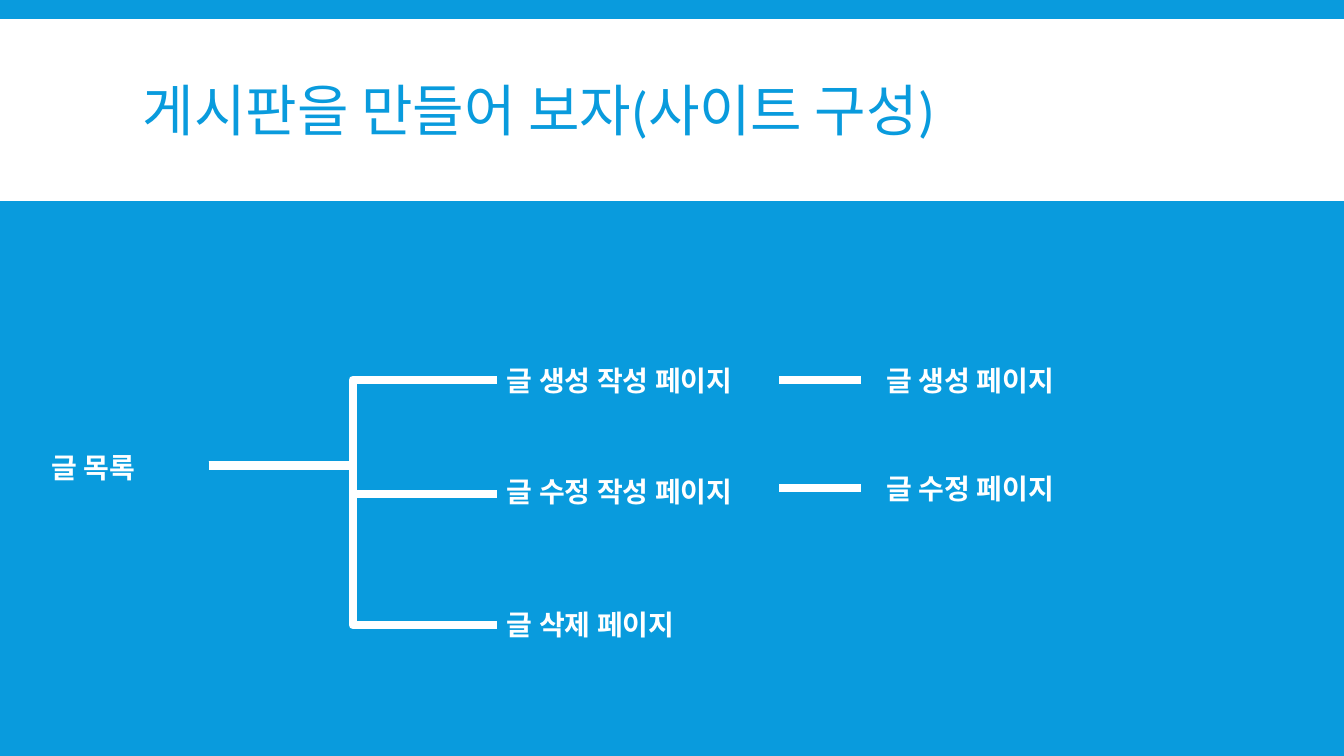
from dataclasses import dataclass

from lxml import etree
from pptx import Presentation
from pptx.dml.color import RGBColor
from pptx.enum.shapes import MSO_CONNECTOR, MSO_SHAPE
from pptx.enum.text import MSO_ANCHOR
from pptx.oxml.ns import qn
from pptx.util import Pt

RECT = MSO_SHAPE.RECTANGLE
ELBOW = MSO_CONNECTOR.ELBOW
LINE = MSO_CONNECTOR.STRAIGHT
TOP = MSO_ANCHOR.TOP
MIDDLE = MSO_ANCHOR.MIDDLE


@dataclass(frozen=True)
class Theme:
    blue: RGBColor = RGBColor(0x09, 0x9B, 0xDD)
    white: RGBColor = RGBColor(0xFF, 0xFF, 0xFF)
    font: str = "Calibri"
    title: int = 40
    label: int = 20
    stroke: int = 6


THEME = Theme()
WIDE, HIGH = 960, 540

# Tree layout: column edges, label height, link height
ROOT_X, PAGE_X, NEXT_X = 29.5, 355, 626.4
LABEL_H = 31.7
ROOT_Y = 332.6
FORK_X = 149
LINK_X = (556.6, 614.9)
LINK_DROP = 15.1  # from the top of a label to its link

# Page label, its top, the end of its branch
PAGES = [
    ("글 생성 작성 페이지", 256.3, 271.4),
    ("글 수정 작성 페이지", 335.5, 352.8),
    ("글 삭제 페이지", 430.6, 446.4),
]
# Follow-up label and its top
NEXTS = [("글 생성 페이지", 256.3), ("글 수정 페이지", 333.4)]


def add_band(slide, y, h):
    band = slide.shapes.add_shape(RECT, 0, Pt(y), Pt(WIDE), Pt(h))
    band.shadow.inherit = False
    band.fill.solid()
    band.fill.fore_color.rgb = THEME.white
    band.line.fill.background()


def add_text(slide, text, x, y, w, h, size, color, bold=False, anchor=TOP):
    box = slide.shapes.add_textbox(Pt(x), Pt(y), Pt(w), Pt(h))
    frame = box.text_frame
    frame.word_wrap = True
    frame.vertical_anchor = anchor
    frame.text = text
    para = frame.paragraphs[0]
    font = para.runs[0].font
    font.name = THEME.font
    font.size = Pt(size)
    font.bold = bold
    font.color.rgb = color
    return para


def add_label(slide, text, x, y, w):
    add_text(slide, text, x, y, w, LABEL_H, THEME.label, THEME.white, bold=True)


def add_link(slide, kind, start, end):
    link = slide.shapes.add_connector(kind, *map(Pt, start + end))
    link.line.color.rgb = THEME.white
    link.line.width = Pt(THEME.stroke)
    etree.SubElement(link._element.spPr, qn("a:effectLst"))


def main():
    deck = Presentation()
    deck.slide_width, deck.slide_height = Pt(WIDE), Pt(HIGH)
    slide = deck.slides.add_slide(deck.slide_layouts[6])
    slide.background.fill.solid()
    slide.background.fill.fore_color.rgb = THEME.blue

    # Title band
    add_band(slide, 13.7, 129.8)
    title = add_text(slide, "게시판을 만들어 보자(사이트 구성)", 95, 22.3, 770.4, 118.8,
                     THEME.title, THEME.blue, anchor=MIDDLE)
    title.line_spacing = 0.85

    # Root and its branches
    add_label(slide, "글 목록", ROOT_X, 318.2, 119.5)
    for text, top, end in PAGES:
        add_link(slide, ELBOW, (FORK_X, ROOT_Y), (PAGE_X, end))
        add_label(slide, text, PAGE_X, top, 190)

    # Follow-up pages
    for text, top in NEXTS:
        y = top + LINK_DROP
        add_link(slide, LINE, (LINK_X[0], y), (LINK_X[1], y))
        add_label(slide, text, NEXT_X, top, 150)

    deck.save("out.pptx")


if __name__ == "__main__":
    main()
